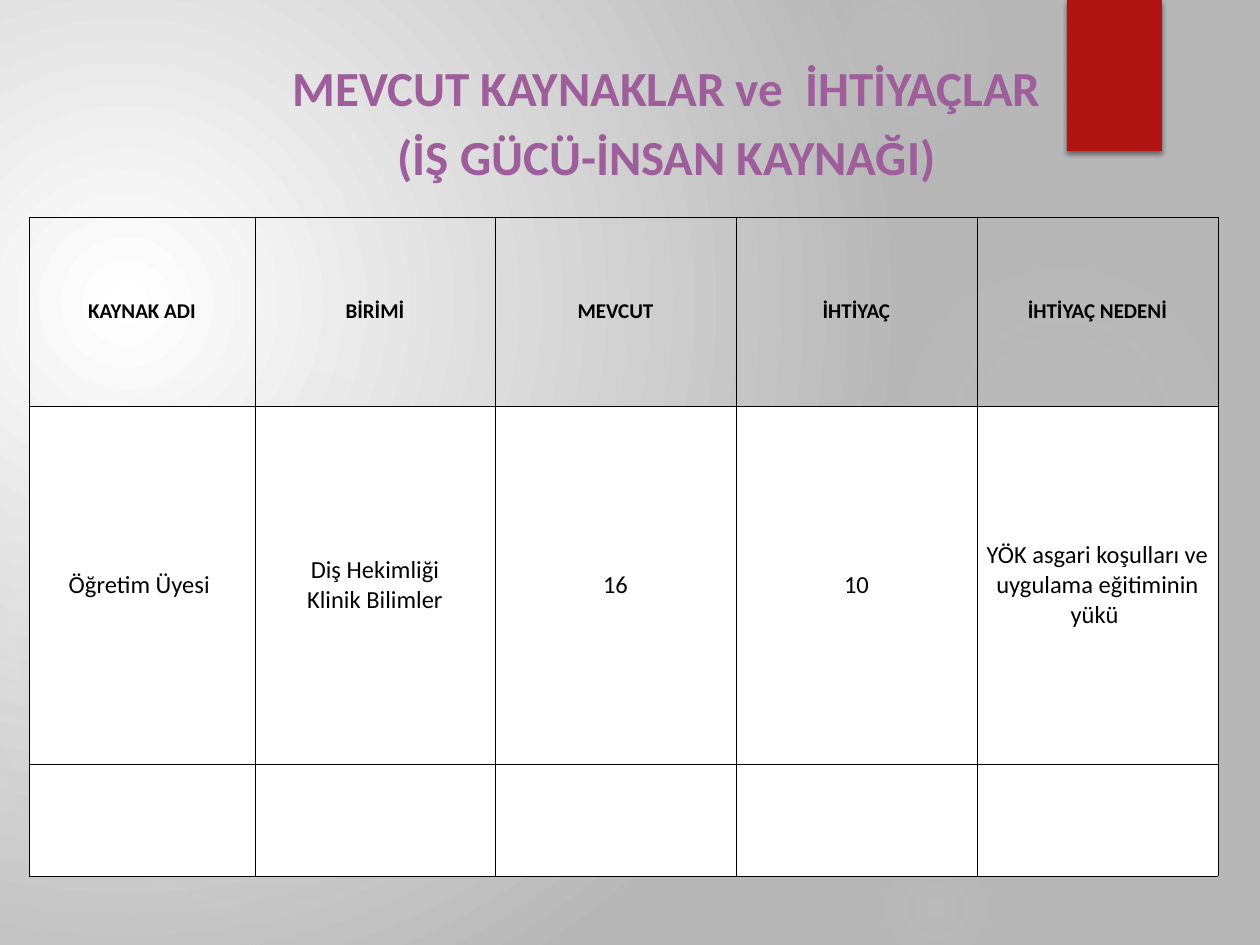
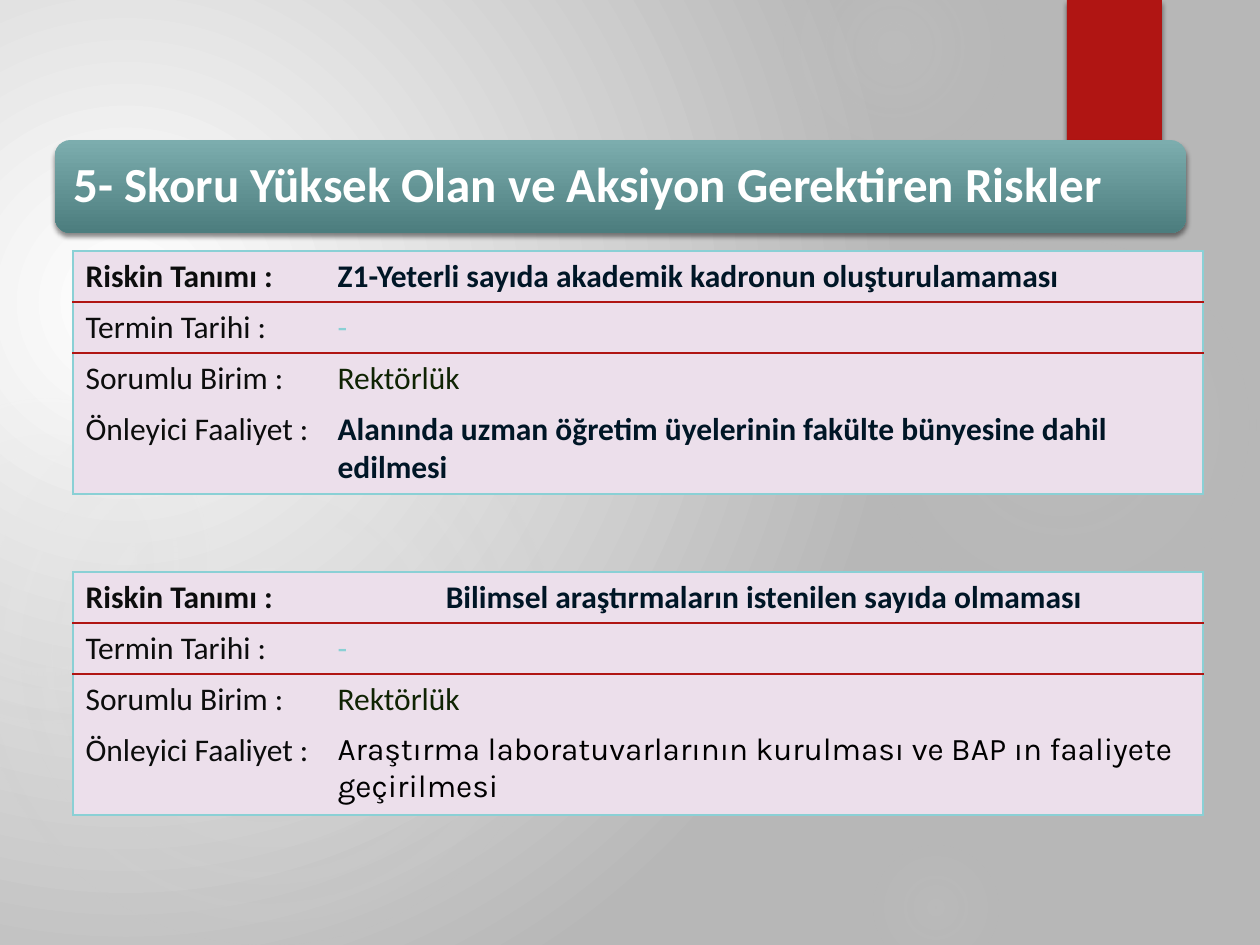
from lxml import etree
from pptx import Presentation
from pptx.dml.color import RGBColor
from pptx.enum.shapes import MSO_SHAPE
from pptx.enum.text import MSO_ANCHOR, PP_ALIGN
from pptx.oxml import parse_xml
from pptx.oxml.ns import nsdecls, qn
from pptx.util import Emu, Pt

RECT, ROUND, OVAL = MSO_SHAPE.RECTANGLE, MSO_SHAPE.ROUNDED_RECTANGLE, MSO_SHAPE.OVAL
LEFT, CENTER = PP_ALIGN.LEFT, PP_ALIGN.CENTER
TOP, MIDDLE, BOTTOM = MSO_ANCHOR.TOP, MSO_ANCHOR.MIDDLE, MSO_ANCHOR.BOTTOM

WHITE = RGBColor(0xFF, 0xFF, 0xFF)
BLACK = RGBColor(0x00, 0x00, 0x00)
SILVER = RGBColor(0xB7, 0xB7, 0xB7)
MIST = RGBColor(0xD9, 0xD9, 0xD9)
RED = RGBColor(0xB0, 0x15, 0x13)
PURPLE = RGBColor(0x9E, 0x5E, 0x9B)
LILAC = RGBColor(0xEC, 0xDF, 0xEB)
AQUA = RGBColor(0x8A, 0xD0, 0xD5)
TEAL = RGBColor(0x7C, 0xAD, 0xAE)
DEEP = RGBColor(0x4C, 0x7D, 0x7E)
INK = RGBColor(0x0C, 0x0D, 0x0D)
NAVY = RGBColor(0x00, 0x16, 0x26)
GREEN = RGBColor(0x0F, 0x23, 0x03)

FONT, ALT_FONT = "Calibri", "Karla"
PLAIN_GRID = "{2D5ABB26-0587-4C30-8999-92F81FD0307C}"
SCALE = 914400 / 126

BUBBLES = [
    (868, 231, 388, (7, 6, 69)),
    (784, -63, 220, (14, 7, 73)),
    (868, 840, 136, (9, 5, 66)),
    (-21, 368, 577, (11, 10, 75)),
    (-116, 399, 325, (8, 8, 72)),
]
STAFF = [
    ["KAYNAK ADI", "BİRİMİ", "MEVCUT", "İHTİYAÇ", "İHTİYAÇ NEDENİ"],
    ["Öğretim Üyesi ", "Diş Hekimliği\nKlinik Bilimler", "16", "10",
     "YÖK asgari koşulları ve uygulama eğitiminin yükü "],
    [""] * 5,
]
LABELS = ["Riskin Tanımı :", "Termin Tarihi :", "Sorumlu Birim :", "Önleyici Faaliyet :"]


def px(num):
    """Turn pixels into EMU."""
    return Emu(round(num * SCALE))


def blend(owner, props, stops, way):
    """Give an owner of a fill a gradient of (place, colour, alpha) stops."""
    owner.fill.background()
    marks = "".join(
        f'<a:gs pos="{pos * 1000}"><a:srgbClr val="{tint}">'
        f'<a:alpha val="{alpha * 1000}"/></a:srgbClr></a:gs>'
        for pos, tint, alpha in stops)
    grad = parse_xml(f'<a:gradFill {nsdecls("a")} rotWithShape="1">'
                     f'<a:gsLst>{marks}</a:gsLst>{way}</a:gradFill>')
    props.replace(props.find(qn("a:noFill")), grad)


def ring(left, top, right, base):
    """Describe a round gradient that runs to the given inner box."""
    return (f'<a:path path="circle"><a:fillToRect l="{left * 1000}" t="{top * 1000}" '
            f'r="{right * 1000}" b="{base * 1000}"/></a:path>')


def block(slide, kind, box):
    """Add a shape with neither line nor shadow."""
    shape = slide.shapes.add_shape(kind, *map(px, box))
    shape.shadow.inherit = False
    shape.line.fill.background()
    return shape


def shade(shape):
    """Drop a soft shadow straight below a shape."""
    effects = shape.element.spPr.find(qn("a:effectLst"))
    effects.append(parse_xml(
        f'<a:outerShdw {nsdecls("a")} blurRad="{Pt(3)}" dist="{Pt(2)}" dir="5400000" '
        f'rotWithShape="0"><a:srgbClr val="{BLACK}"><a:alpha val="45000"/></a:srgbClr>'
        '</a:outerShdw>'))


def write(frame, text, size, tint, bold=False, align=LEFT, font=FONT):
    """Fill a text frame with evenly styled paragraphs."""
    frame.text = text
    for para in frame.paragraphs:
        para.alignment = align
        for run in para.runs:
            run.font.name = font
            run.font.size = Pt(size)
            run.font.bold = bold
            run.font.color.rgb = tint


def border(cell, tints, width):
    """Draw the left, right, top and bottom edges that have a colour."""
    props = cell._tc.get_or_add_tcPr()
    for side, tint in zip("LRTB", tints):
        if tint is not None:
            line = etree.SubElement(props, qn(f"a:ln{side}"), w=str(Pt(width)))
            fill = etree.SubElement(line, qn("a:solidFill"))
            etree.SubElement(fill, qn("a:srgbClr"), val=str(tint))


def paint(cell, tint):
    """Fill a cell with one colour."""
    cell.fill.solid()
    cell.fill.fore_color.rgb = tint


def grid(slide, left, top, cols, rows):
    """Add an unstyled table with the given column and row sizes."""
    box = left, top, sum(cols), sum(rows)
    table = slide.shapes.add_table(len(rows), len(cols), *map(px, box)).table
    table.first_row = table.horz_banding = False
    table._tbl.tblPr.find(qn("a:tableStyleId")).text = PLAIN_GRID
    for col, width in zip(table.columns, cols):
        col.width = px(width)
    for row, height in zip(table.rows, rows):
        row.height = px(height)
    return table


def scene(deck):
    """Start a slide with the shared backdrop, bubbles and ribbon."""
    slide = deck.slides.add_slide(deck.slide_layouts[6])
    props = slide.element.xpath("./p:cSld/p:bg/p:bgPr")
    slide.background.fill.background()
    props = slide.element.xpath("./p:cSld/p:bg/p:bgPr")[0]
    blend(slide.background, props, [(0, WHITE, 100), (100, SILVER, 100)],
          ring(45, 65, 125, 100))
    for left, top, size, (core, mid, rim) in BUBBLES:
        bubble = block(slide, OVAL, (left, top, size, size))
        blend(bubble, bubble.element.spPr,
              [(0, MIST, core), (36, MIST, mid), (rim, MIST, 0)], ring(50, 50, 50, 50))
    ribbon = block(slide, RECT, (1067, 0, 95, 151))
    ribbon.fill.solid()
    ribbon.fill.fore_color.rgb = RED
    shade(ribbon)
    return slide


def heading(slide, box, text):
    """Set the centred purple title at the foot of its box."""
    frame = slide.shapes.add_textbox(*map(px, box)).text_frame
    frame.word_wrap = True
    frame.vertical_anchor = BOTTOM
    write(frame, text, 28, PURPLE, True, CENTER)
    for para in frame.paragraphs:
        para.space_after = Pt(6)


def staffing(slide, left, top):
    """Place the table of staff at hand and staff needed."""
    table = grid(slide, left, top, [226] + [240] + [241] * 3, [189, 358, 112])
    for row, texts in enumerate(STAFF):
        for col, text in enumerate(texts):
            cell = table.cell(row, col)
            border(cell, [BLACK] * 4, 0.5)
            cell.margin_left = cell.margin_right = 0
            cell.margin_top = cell.margin_bottom = 0
            cell.vertical_anchor = MIDDLE
            write(cell.text_frame, text, 14 if row else 12, BLACK, not row, CENTER)
            if row:
                paint(cell, WHITE)
            else:
                cell.fill.background()


def banner(slide, box, text):
    """Place the rounded teal title band."""
    band = block(slide, ROUND, box)
    blend(band, band.element.spPr, [(0, TEAL, 100), (100, DEEP, 100)],
          '<a:lin ang="5400000" scaled="0"/>')
    shade(band)
    frame = band.text_frame
    frame.word_wrap = True
    frame.vertical_anchor = MIDDLE
    frame.margin_left = frame.margin_right = px(14)
    write(frame, text, 28, WHITE, True)
    frame.paragraphs[0].line_spacing = 0.9


def risk(slide, left, top, title, align, deed, style):
    """Place one risk card with its four labelled rows."""
    table = grid(slide, left, top, [252, 878], [51, 51, 51, 90])
    values = [
        (title, dict(tint=NAVY, bold=True, align=align)),
        ("-", dict(tint=AQUA)),
        ("Rektörlük", dict(tint=GREEN)),
        (deed, style),
    ]
    tops = [AQUA, RED, None, None]
    bases = [RED, None, None, AQUA]
    for row, (label, (value, look)) in enumerate(zip(LABELS, values)):
        first, last = table.cell(row, 0), table.cell(row, 1)
        border(first, [AQUA, None, tops[row], bases[row]], 1)
        border(last, [None, AQUA, tops[row], bases[row]], 1)
        write(first.text_frame, label, 18, INK, not row)
        write(last.text_frame, value, 18, **look)
        for cell in (first, last):
            cell.vertical_anchor = TOP
            paint(cell, LILAC)


def main():
    """Build and save both slides."""
    deck = Presentation()
    deck.slide_width, deck.slide_height = px(1260), px(945)

    slide = scene(deck)
    heading(slide, (262, 8, 809, 184),
            "MEVCUT KAYNAKLAR ve  İHTİYAÇLAR\n(İŞ GÜCÜ-İNSAN KAYNAĞI)")
    staffing(slide, 29, 217)

    slide = scene(deck)
    risk(slide, 73, 251, "Z1-Yeterli sayıda akademik kadronun oluşturulamaması", LEFT,
         "Alanında uzman öğretim üyelerinin fakülte bünyesine dahil edilmesi",
         dict(tint=NAVY, bold=True))
    risk(slide, 73, 572, "Bilimsel araştırmaların istenilen sayıda olmaması", CENTER,
         "Araştırma laboratuvarlarının kurulması ve BAP ın faaliyete geçirilmesi",
         dict(tint=BLACK, font=ALT_FONT))
    banner(slide, (55, 140, 1131, 93), "5- Skoru Yüksek Olan ve Aksiyon Gerektiren Riskler")

    deck.save("out.pptx")


if __name__ == "__main__":
    main()
